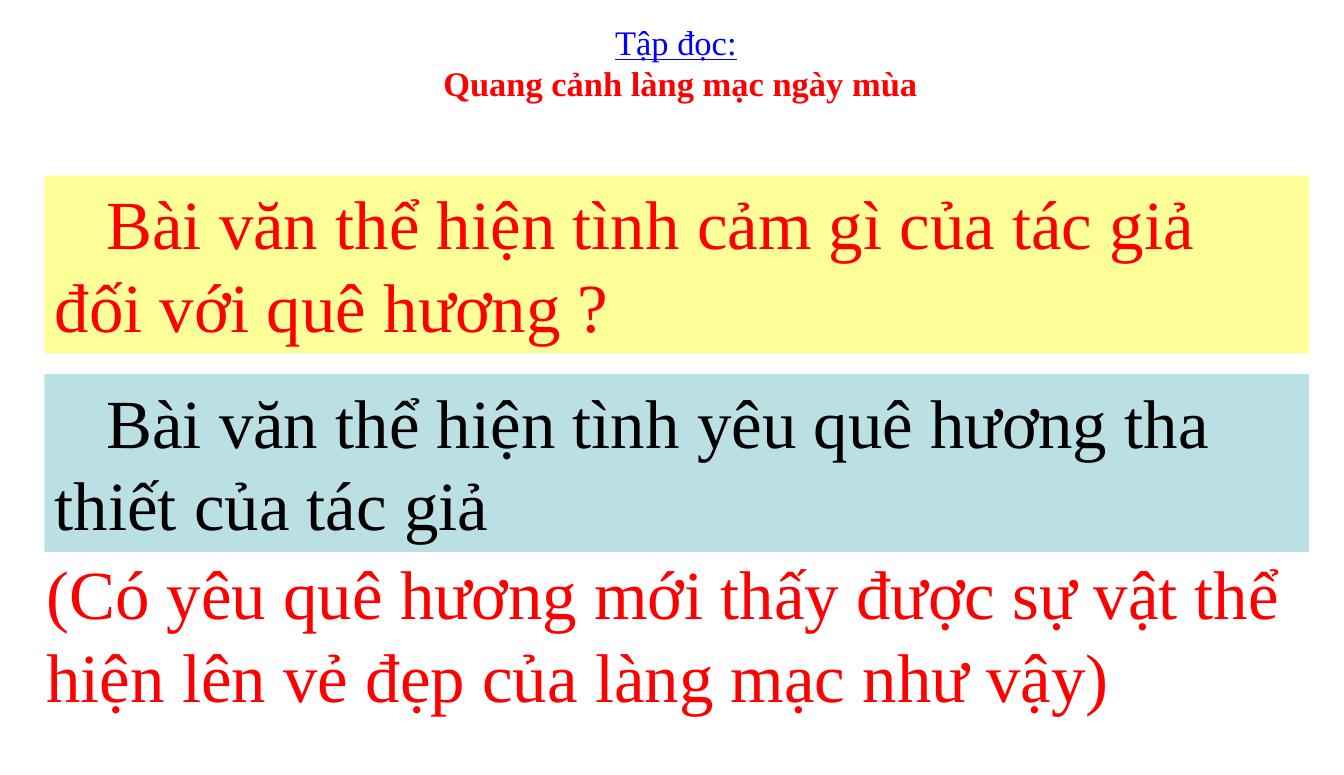
"""Build a reading-lesson slide with a question, an answer and a remark."""
import dataclasses

import pptx
import pptx.dml.color
import pptx.enum.shapes
import pptx.enum.text
import pptx.util
from pptx.util import Inches


@dataclasses.dataclass(frozen=True)
class Theme:
    """Hold the font, type sizes and colours of the slide."""
    font: str = "Times New Roman"
    title_size: int = 24
    body_size: int = 48
    red: str = "FF0000"
    blue: str = "0000FF"
    black: str = "000000"
    yellow: str = "FFFF99"
    teal: str = "BBE0E3"


THEME = Theme()


def rgb(value):
    """Turn a hex string into a colour."""
    return pptx.dml.color.RGBColor.from_string(value)


def style_span(span, size, color, bold=False, underline=False):
    """Give a run its font, size, colour and emphasis."""
    span.font.name = THEME.font
    span.font.size = pptx.util.Pt(size)
    span.font.color.rgb = rgb(color)
    span.font.bold = bold
    span.font.underline = underline


def fill_body(box, text, color):
    """Write one large left-aligned paragraph into a shape."""
    frame = box.text_frame
    frame.word_wrap = True
    frame.auto_size = pptx.enum.text.MSO_AUTO_SIZE.SHAPE_TO_FIT_TEXT
    frame.vertical_anchor = pptx.enum.text.MSO_ANCHOR.TOP
    frame.text = text
    para = frame.paragraphs[0]
    para.alignment = pptx.enum.text.PP_ALIGN.LEFT
    style_span(para.runs[0], THEME.body_size, color)
    return para


def add_panel(page, top, text, fill, color):
    """Add a filled panel whose first line is indented."""
    box = page.shapes.add_shape(
        pptx.enum.shapes.MSO_SHAPE.RECTANGLE,
        Inches(0.43), Inches(top), Inches(12.23), Inches(1.72))
    box.shadow.inherit = False
    box.fill.solid()
    box.fill.fore_color.rgb = rgb(fill)
    box.line.fill.background()
    para = fill_body(box, text, color)
    properties = para._p.get_or_add_pPr()
    properties.set("marL", "0")
    properties.set("indent", str(Inches(0.5)))


def add_remark(page, text):
    """Add the unfilled closing remark."""
    box = page.shapes.add_textbox(
        Inches(0.35), Inches(5.28), Inches(12.62), Inches(1.72))
    fill_body(box, text, THEME.red)


def add_heading(page, subject, title):
    """Add the underlined subject above the bold lesson title."""
    box = page.shapes.add_textbox(
        Inches(2.33), Inches(0.13), Inches(8.5), Inches(0.95))
    frame = box.text_frame
    frame.word_wrap = True
    frame.vertical_anchor = pptx.enum.text.MSO_ANCHOR.MIDDLE
    frame.text = f"{subject}\n{title}"
    for para in frame.paragraphs:
        para.alignment = pptx.enum.text.PP_ALIGN.CENTER
    first, second = frame.paragraphs
    style_span(first.runs[0], THEME.title_size, THEME.blue, underline=True)
    space = first.add_run()
    space.text = " "
    style_span(space, THEME.title_size, THEME.blue)
    style_span(second.runs[0], THEME.title_size, THEME.red, bold=True)


def main():
    """Build and save the slide."""
    deck = pptx.Presentation()
    deck.slide_width, deck.slide_height = Inches(13), Inches(7.5)
    page = deck.slides.add_slide(deck.slide_layouts[6])
    add_panel(page, 1.7,
              "Bài văn thể hiện tình cảm gì của tác giả đối với quê hương ?",
              THEME.yellow, THEME.red)
    add_panel(page, 3.62,
              "Bài văn thể hiện tình yêu quê hương tha thiết của tác giả",
              THEME.teal, THEME.black)
    add_remark(page, "(Có yêu quê hương mới thấy được sự vật thể hiện lên "
                     "vẻ đẹp của làng mạc như vậy)")
    add_heading(page, "Tập đọc:", "Quang cảnh làng mạc ngày mùa")
    deck.save("out.pptx")


if __name__ == "__main__":
    main()
